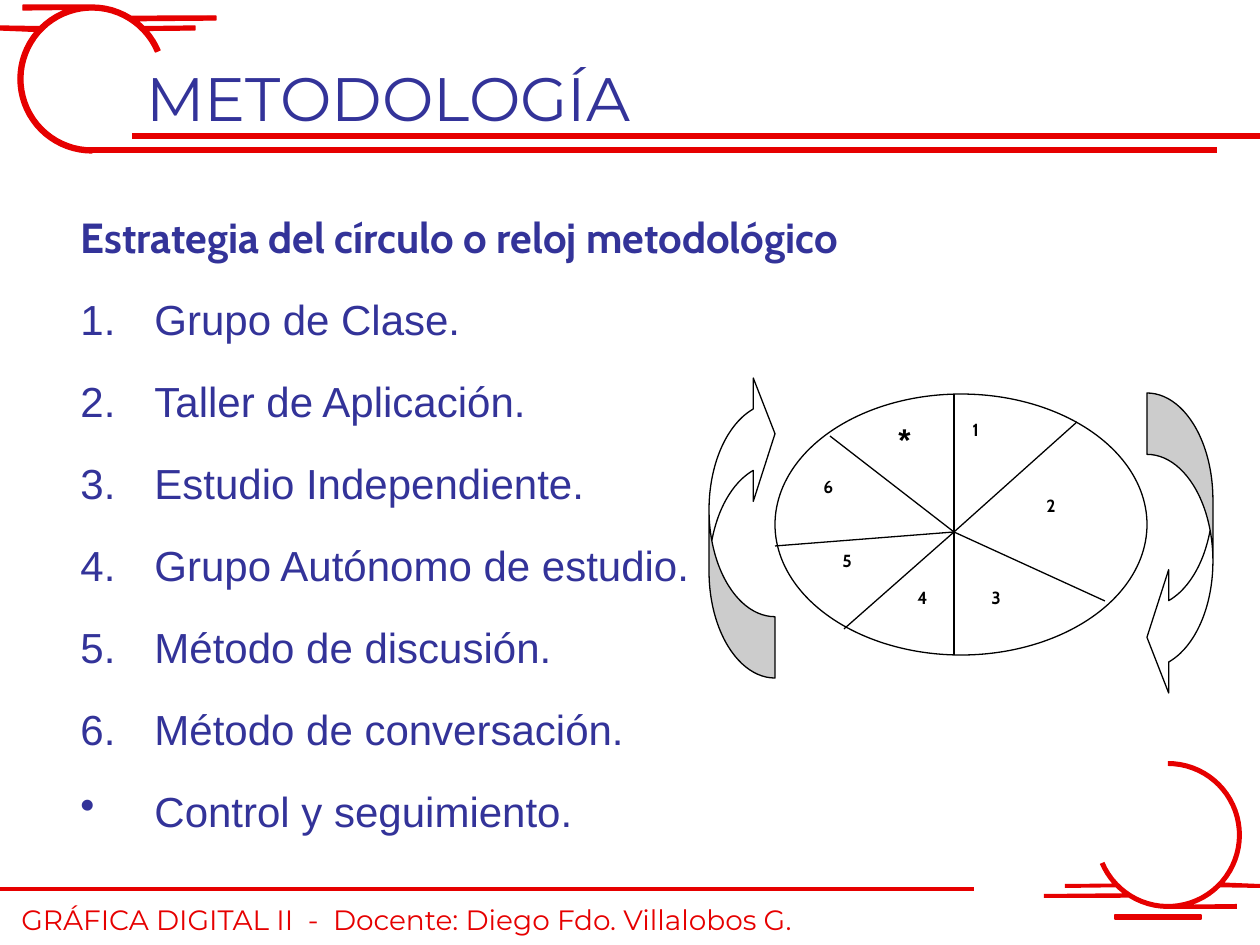
from math import cos, radians, sin

from lxml.etree import SubElement
from pptx import Presentation
from pptx.dml.color import RGBColor
from pptx.enum.shapes import MSO_CONNECTOR, MSO_SHAPE
from pptx.enum.text import MSO_ANCHOR, MSO_AUTO_SIZE
from pptx.oxml.ns import qn
from pptx.util import Emu, Pt

COLORS = {"red": "E60000", "blue": "333399", "black": "000000", "white": "FFFFFF"}
WIDTH, HEIGHT = 1260, 945


def px(n):
    return Emu(round(n * 914400 / 126))


def rgb(name):
    return RGBColor.from_string(COLORS[name])


class Deck:
    """Holds the style and the current slide."""

    thin = 0.75

    def __init__(self, slide):
        self.shapes = slide.shapes

    def paint(self, sp, fill, line):
        sp.shadow.inherit = False
        sp.fill.solid()
        sp.fill.fore_color.rgb = rgb(fill)
        if line:
            sp.line.color.rgb = rgb(line)
            sp.line.width = Pt(self.thin)
        else:
            sp.line.fill.background()
        return sp

    def shape(self, kind, x, y, w, h, fill="white", line="black"):
        sp = self.shapes.add_shape(kind, px(x), px(y), px(w), px(h))
        return self.paint(sp, fill, line)

    def outline(self, points, fill, line=None):
        pts = [(px(x), px(y)) for x, y in points]
        fb = self.shapes.build_freeform(*pts[0], scale=1.0)
        fb.add_line_segments(pts[1:], close=True)
        return self.paint(fb.convert_to_shape(), fill, line)

    def line(self, x1, y1, x2, y2, color="black", width=thin):
        c = self.shapes.add_connector(
            MSO_CONNECTOR.STRAIGHT, px(x1), px(y1), px(x2), px(y2))
        c.line.color.rgb = rgb(color)
        c.line.width = Pt(width)
        SubElement(c._element.spPr, qn("a:effectLst"))

    def text(self, text, x, y, w, h, font, size, color, bold=False,
             wrap=True, grow=False):
        tb = self.shapes.add_textbox(px(x), px(y), px(w), px(h))
        tf = tb.text_frame
        tf.text = text
        tf.word_wrap = wrap
        tf.auto_size = MSO_AUTO_SIZE.SHAPE_TO_FIT_TEXT if grow else MSO_AUTO_SIZE.NONE
        for p in tf.paragraphs:
            for r in p.runs:
                self.style(r.font, font, size, color, bold)
        return tf

    def style(self, f, font, size, color, bold):
        f.name, f.size, f.bold = font, Pt(size), bold
        f.color.rgb = rgb(color)

    def bullet(self, p, indent, tag, **attrs):
        pPr = p._p.get_or_add_pPr()
        pPr.set("marL", str(px(indent)))
        pPr.set("indent", str(-px(indent)))
        SubElement(pPr, qn(tag), **attrs)


def arc(radius, start, end, center=(92, 79)):
    """Points along a circle, angles in degrees, clockwise on the slide."""
    steps = max(2, round(abs(end - start) / 5))
    angles = [radians(start + (end - start) * i / steps) for i in range(steps + 1)]
    return [(center[0] + radius * cos(a), center[1] + radius * sin(a)) for a in angles]


def ornament():
    """An open ring with bars running off its upper part."""
    outer, inner = 74, 69
    return [
        *arc(outer, 220, 90), *arc(inner, 90, 337), *arc(outer, 337, 319),
        (195, 30), (195, 26), *arc(outer, 315, 308),
        (216, 20), (216, 16), *arc(outer, 302, 270),
        (23, 5), (23, 10), *arc(outer, 250, 225),
        (0, 26), (0, 30),
    ]


def main():
    prs = Presentation()
    prs.slide_width, prs.slide_height = px(WIDTH), px(HEIGHT)
    s = Deck(prs.slides.add_slide(prs.slide_layouts[6]))

    # Footer: the ornament turned by half a circle
    s.outline([(WIDTH - x, 914 - y) for x, y in ornament()], "red")
    s.shape(MSO_SHAPE.RECTANGLE, 1115, 915, 86, 4, "red", "red")
    s.line(0, 889, 974, 889, "red", 2.5)
    s.text("GRÁFICA DIGITAL II  -  Docente: Diego Fdo. Villalobos G.",
           9, 896, 900, 47, "Montserrat", 16, "red", wrap=False, grow=True)

    # Header
    s.outline(ornament(), "red", "red")
    s.line(132, 136, WIDTH, 136, "red", 3.25)
    s.line(88, 150, 1217, 150, "red", 3.25)
    s.text("METODOLOGÍA", 134, 54, 1080, 86, "Montserrat", 35, "blue", grow=True)

    # Clock face
    s.shape(MSO_SHAPE.OVAL, 775, 394, 372, 261)
    s.line(954, 655, 954, 394)
    for x, y in [(1077, 422), (1105, 601), (844, 629), (775, 546), (830, 436)]:
        s.line(954, 532, x, y)

    # Clock labels
    labels = [("1", 960, 413), ("2", 1034, 489), ("3", 979, 581), ("4", 905, 581),
              ("5", 830, 544), ("6", 811, 470), ("*", 886, 414)]
    for label, x, y in labels:
        font, size = ("Arial", 18) if label == "*" else ("Cabin", 10)
        s.text(label, x, y, 55, 55, font, size, "black", bold=True)

    # Turning arrows
    for x, y, turn in [(1147, 393, 0), (709, 372, 180)]:
        sp = s.shape(MSO_SHAPE.CURVED_LEFT_ARROW, x, y, 66, 306)
        sp.rotation = turn
        for i, value in enumerate([0.93, 1.87, 0.33]):
            sp.adjustments[i] = value

    # Numbered list under its heading
    items = ["Estrategia del círculo o reloj metodológico", "Grupo de Clase.",
             "Taller de Aplicación.", "Estudio Independiente.",
             "Grupo Autónomo de estudio.", "Método de discusión.",
             "Método de conversación.", "Control y seguimiento."]
    tf = s.text("\n".join(items), 68, 192, 916, 663, "Arial", 24, "blue",
                wrap=False, grow=True)
    tf.vertical_anchor = MSO_ANCHOR.MIDDLE
    heading, *steps, last = tf.paragraphs
    s.style(heading.runs[0].font, "Cabin", 24, "blue", True)
    s.bullet(heading, 74, "a:buNone")
    for p in steps:
        s.bullet(p, 74, "a:buAutoNum", type="arabicPeriod")
    s.bullet(last, 74, "a:buChar", char="•")
    for p in tf.paragraphs:
        p.space_before = Pt(0 if p._p is heading._p else 9)
        p.space_after = Pt(9)

    prs.save("out.pptx")


if __name__ == "__main__":
    main()
